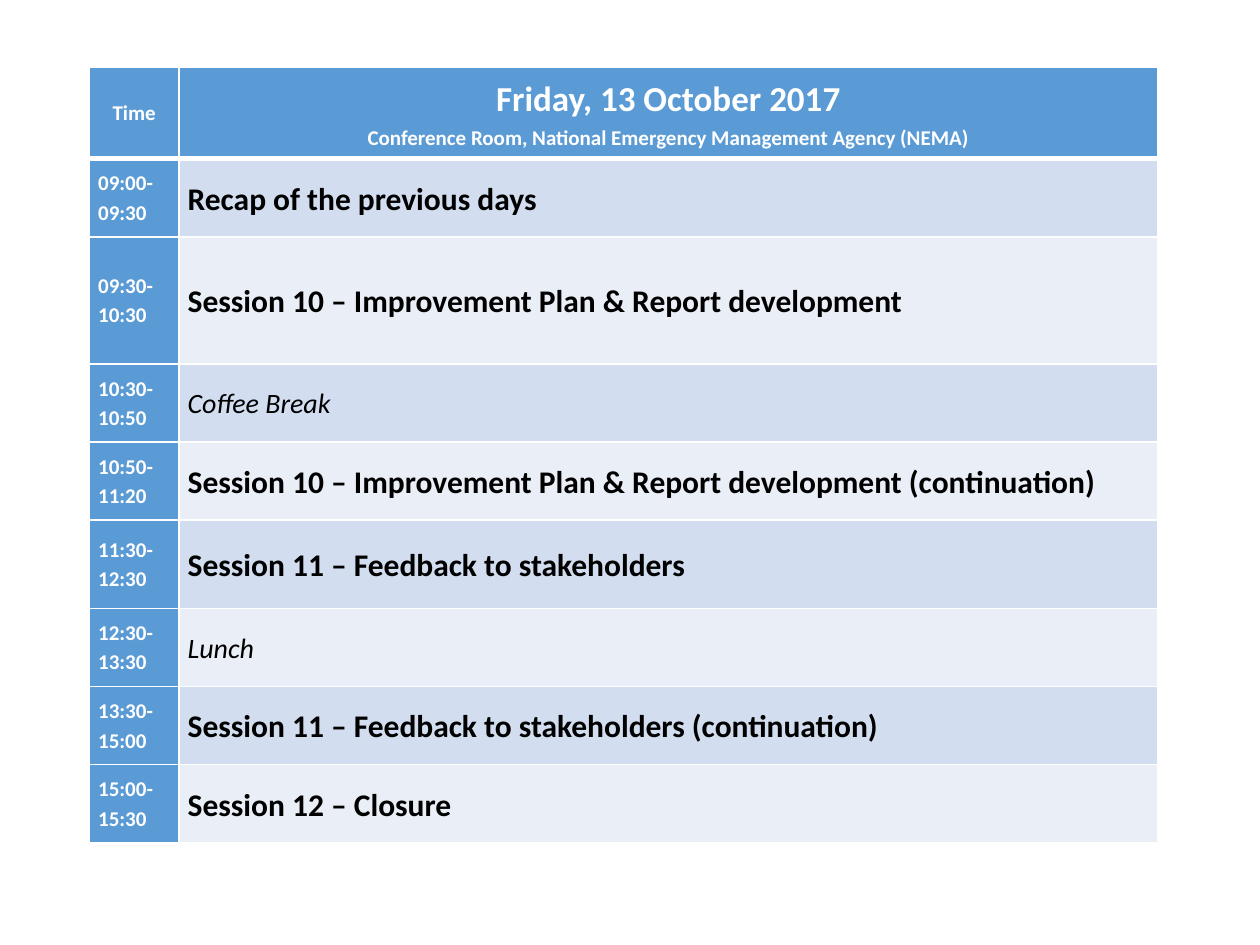
from lxml.etree import SubElement
from pptx import Presentation
from pptx.dml.color import RGBColor
from pptx.enum.text import MSO_ANCHOR, PP_ALIGN
from pptx.oxml.ns import qn
from pptx.util import Inches, Pt

BLUE, WHITE, BLACK = "5B9BD5", "FFFFFF", "000000"
BANDS = ("D2DEEF", "EAEFF7")
CELL_FORMAT = {
    "margin_left": Inches(0.07),
    "margin_right": Inches(0.07),
    "margin_top": Inches(0.02),
    "margin_bottom": Inches(0.04),
    "vertical_anchor": MSO_ANCHOR.MIDDLE,
}
LABEL = {"size": Pt(12), "bold": True, "italic": False}
DATE = {**LABEL, "size": Pt(20)}
SESSION = {**LABEL, "size": Pt(18)}
BREAK = {"size": Pt(16), "bold": False, "italic": True}

HEADER_HEIGHT = 0.73
HEADING = [
    ("Friday, 13 October 2017", DATE),
    ("Conference Room, National Emergency Management Agency (NEMA)", LABEL),
]
AGENDA = [
    ("09:00-09:30", "Recap of the previous days", SESSION, 0.62),
    ("09:30-10:30", "Session 10 – Improvement Plan & Report development", SESSION, 1.01),
    ("10:30-10:50", "Coffee Break", BREAK, 0.62),
    ("10:50-11:20", "Session 10 – Improvement Plan & Report development (continuation)", SESSION, 0.62),
    ("11:30-12:30", "Session 11 – Feedback to stakeholders", SESSION, 0.7),
    ("12:30-13:30", "Lunch", BREAK, 0.62),
    ("13:30-15:00", "Session 11 – Feedback to stakeholders (continuation)", SESSION, 0.62),
    ("15:00-15:30", "Session 12 – Closure", SESSION, 0.62),
]


def color(value):
    """Turn a hex string into a colour."""
    return RGBColor.from_string(value)


def apply_format(target, values):
    """Set each named attribute on the target."""
    for name, value in values.items():
        setattr(target, name, value)


def add_borders(cell, widths):
    """Draw white borders of the given widths around a cell."""
    properties = cell._tc.get_or_add_tcPr()
    for side, width in widths.items():
        border = SubElement(properties, qn(f"a:ln{side}"), w=str(Pt(width)))
        fill = SubElement(border, qn("a:solidFill"))
        SubElement(fill, qn("a:srgbClr"), val=WHITE)


def fill_cell(cell, lines, background, ink, align=PP_ALIGN.LEFT, top=1, bottom=1):
    """Write formatted lines into a cell and style it."""
    add_borders(cell, {"L": 1, "R": 1, "T": top, "B": bottom})
    cell.fill.solid()
    cell.fill.fore_color.rgb = color(background)
    apply_format(cell, CELL_FORMAT)
    frame = cell.text_frame
    frame.text = "\n".join(text for text, _ in lines)
    for paragraph, (_, font_format) in zip(frame.paragraphs, lines):
        apply_format(paragraph, {"alignment": align, "line_spacing": 1.15})
        font = paragraph.runs[0].font
        apply_format(font, {"name": "Calibri", **font_format})
        font.color.rgb = color(ink)


def add_agenda(slide, left, top, width, time_width):
    """Place the day's agenda table in the given box."""
    heights = [HEADER_HEIGHT] + [entry[-1] for entry in AGENDA]
    agenda = slide.shapes.add_table(
        len(heights), 2, left, top, width, Inches(sum(heights))
    ).table
    agenda.columns[0].width = time_width
    agenda.columns[1].width = width - time_width
    for row, height in zip(agenda.rows, heights):
        row.height = Inches(height)
    for column, lines in enumerate(([("Time", LABEL)], HEADING)):
        fill_cell(agenda.cell(0, column), lines, BLUE, WHITE, PP_ALIGN.CENTER, bottom=3)
    for index, (time, topic, topic_format, _) in enumerate(AGENDA):
        edge = 1 if index else 3
        fill_cell(agenda.cell(index + 1, 0), [(time, LABEL)], BLUE, WHITE, top=edge)
        fill_cell(agenda.cell(index + 1, 1), [(topic, topic_format)],
                  BANDS[index % 2], BLACK, top=edge)


def main():
    """Build and save the agenda slide."""
    presentation = Presentation()
    presentation.slide_width = Inches(10)
    presentation.slide_height = Inches(7.5)
    slide = presentation.slides.add_slide(presentation.slide_layouts[6])
    add_agenda(slide, Inches(0.71), Inches(0.53), Inches(8.48), Inches(0.71))
    presentation.save("out.pptx")


if __name__ == "__main__":
    main()
